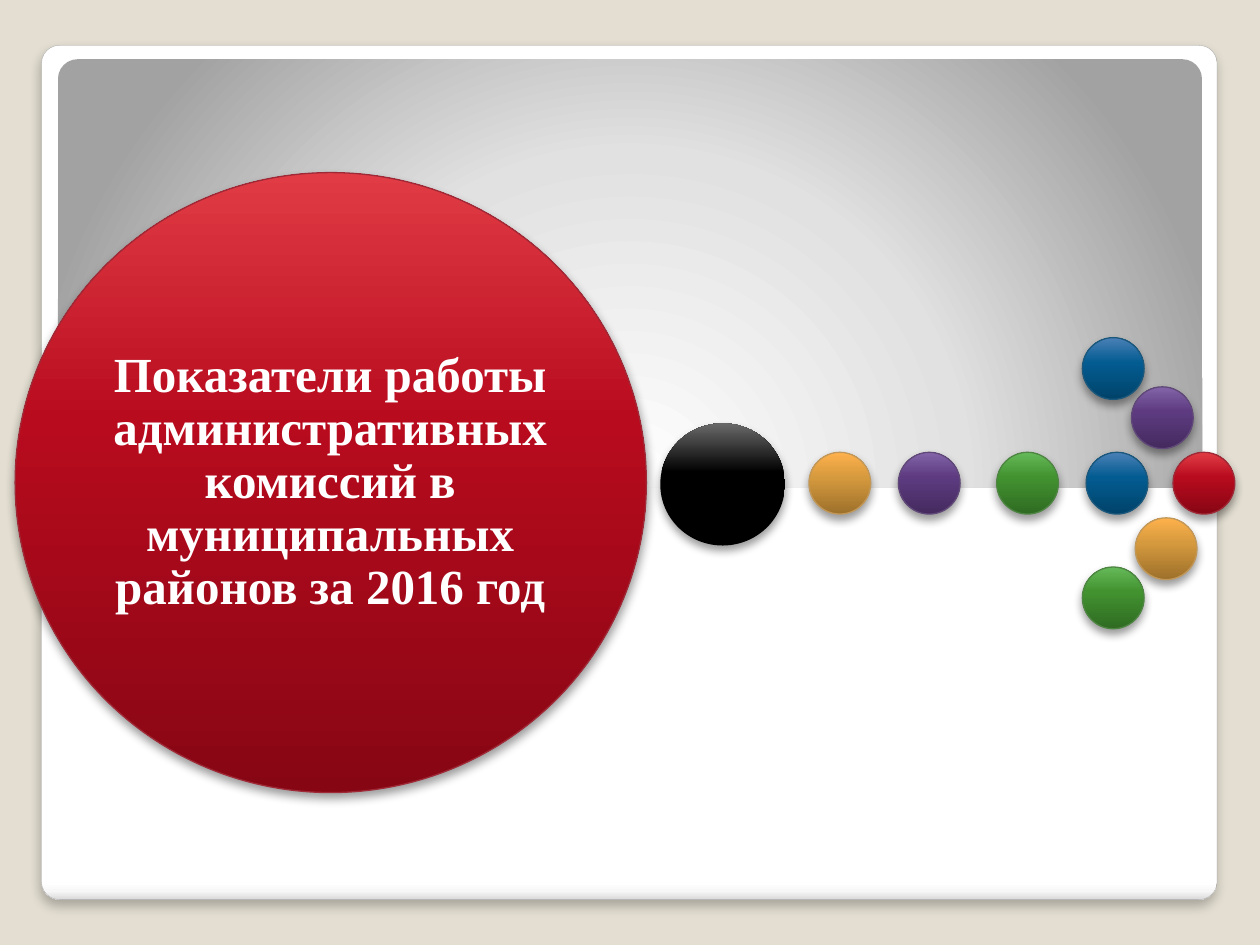
from dataclasses import dataclass

from lxml import etree
from pptx import Presentation
from pptx.dml.color import RGBColor
from pptx.enum.shapes import MSO_SHAPE
from pptx.enum.text import MSO_ANCHOR, PP_ALIGN
from pptx.oxml import parse_xml
from pptx.oxml.ns import nsdecls, qn
from pptx.util import Inches, Pt

ELLIPSE = MSO_SHAPE.OVAL
ROUNDED = MSO_SHAPE.ROUNDED_RECTANGLE
CENTER = PP_ALIGN.CENTER
MIDDLE = MSO_ANCHOR.MIDDLE


@dataclass(frozen=True)
class Tone:
    dark: str
    mid: str
    light: str
    line: str = ""

    def stops(self):
        return [(0, self.dark), (60, self.mid), (100, self.light)]


class Theme:
    background = "E3DED1"
    panel = [(0, "FFFFFF"), (98, "FFFFFF"), (99, "F7F7F7"), (100, "DADADA")]
    panel_line = "A4A4A4"
    header = [(0, "FFFFFF"), (55, "E1E1E1"), (100, "A2A2A2")]
    red = Tone("870614", "B80B1E", "E13C45", "9F2936")
    blue = Tone("00436A", "035C91", "4A80B7", "1B587C")
    green = Tone("2F6B22", "429230", "66B959", "4E8542")
    purple = Tone("442A5E", "5E3B81", "8364A8", "604878")
    orange = Tone("9D702B", "D69A3E", "FFB14C", "C19859")
    black = Tone("000000", "000000", "696969")
    text = "FFFFFF"
    shadow = "000000"
    font = "Times New Roman"
    title_size = 28


LINEAR = '<a:lin ang="{}" scaled="0"/>'
RADIAL = ('<a:path path="circle"><a:fillToRect l="50000" t="175000" '
          'r="50000" b="-75000"/></a:path>')
DOT = 0.49
ROW_TOP = 3.59
DOTS = [
    (9.31, ROW_TOP, Theme.red),
    (8.62, ROW_TOP, Theme.blue),
    (7.91, ROW_TOP, Theme.green),
    (7.13, ROW_TOP, Theme.purple),
    (6.42, ROW_TOP, Theme.orange),
    (8.59, 2.68, Theme.blue),
    (8.59, 4.5, Theme.green),
    (8.98, 3.07, Theme.purple),
    (9.01, 4.11, Theme.orange),
]


def set_gradient(sp, stops, direction):
    items = "".join(
        f'<a:gs pos="{pos * 1000}"><a:srgbClr val="{color}"/></a:gs>'
        for pos, color in stops)
    grad = parse_xml(
        f'<a:gradFill {nsdecls("a")} rotWithShape="1">'
        f'<a:gsLst>{items}</a:gsLst>{direction}</a:gradFill>')
    sp._element.spPr.find(qn("a:prstGeom")).addnext(grad)


def set_shadow(sp, alpha, blur, dist):
    effects = sp._element.spPr.find(qn("a:effectLst"))
    outer = etree.SubElement(
        effects, qn("a:outerShdw"), blurRad=str(Pt(blur)), dist=str(Pt(dist)),
        dir="5400000", algn="t", rotWithShape="0")
    color = etree.SubElement(outer, qn("a:srgbClr"), val=Theme.shadow)
    etree.SubElement(color, qn("a:alpha"), val=str(alpha * 1000))


def add_shape(slide, kind, box, stops, direction, line="", width=0.75,
              radius=None, shadow=None):
    sp = slide.shapes.add_shape(kind, *map(Inches, box))
    if radius is not None:
        sp.adjustments[0] = radius
    set_gradient(sp, stops, direction)
    if line:
        sp.line.color.rgb = RGBColor.from_string(line)
        sp.line.width = Pt(width)
    else:
        sp.line.fill.background()
    sp.shadow.inherit = False
    if shadow:
        set_shadow(sp, *shadow)
    return sp


def add_ball(slide, box, tone):
    return add_shape(slide, ELLIPSE, box, tone.stops(),
                     LINEAR.format(16200000), line=tone.line,
                     shadow=(40, 5.2, 3))


def add_text(slide, box, text, *, size, color, bold=False, align=CENTER,
             anchor=MIDDLE, inset=0.04, spacing=0.9):
    tf = slide.shapes.add_textbox(*map(Inches, box)).text_frame
    tf.word_wrap = True
    tf.vertical_anchor = anchor
    tf.margin_left = tf.margin_right = Inches(inset)
    tf.margin_top = tf.margin_bottom = Inches(inset)
    p = tf.paragraphs[0]
    p.alignment = align
    p.line_spacing = spacing
    r = p.add_run()
    r.text = text
    r.font.name = Theme.font
    r.font.size = Pt(size)
    r.font.bold = bold
    r.font.color.rgb = RGBColor.from_string(color)


def add_backdrop(slide):
    fill = slide.background.fill
    fill.solid()
    fill.fore_color.rgb = RGBColor.from_string(Theme.background)
    add_shape(slide, ROUNDED, (0.33, 0.36, 9.33, 6.78), Theme.panel,
              LINEAR.format(5400000), line=Theme.panel_line, width=0.16,
              radius=0.021, shadow=(25, 6, 4))
    add_shape(slide, ROUNDED, (0.46, 0.47, 9.08, 3.4), Theme.header,
              RADIAL, radius=0.046)


def main():
    prs = Presentation()
    prs.slide_width = Inches(10)
    prs.slide_height = Inches(7.5)
    slide = prs.slides.add_slide(prs.slide_layouts[6])
    add_backdrop(slide)
    for left, top, tone in DOTS:
        add_ball(slide, (left, top, DOT, DOT), tone)
    add_ball(slide, (5.24, 3.36, 0.99, 0.97), Theme.black)
    add_ball(slide, (0.12, 1.37, 5.01, 4.92), Theme.red)
    add_text(slide, (0.85, 2.09, 3.54, 3.48),
             "Показатели работы административных комиссий в "
             "муниципальных районов за 2016 год",
             size=Theme.title_size, color=Theme.text, bold=True)
    prs.save("out.pptx")


if __name__ == "__main__":
    main()
